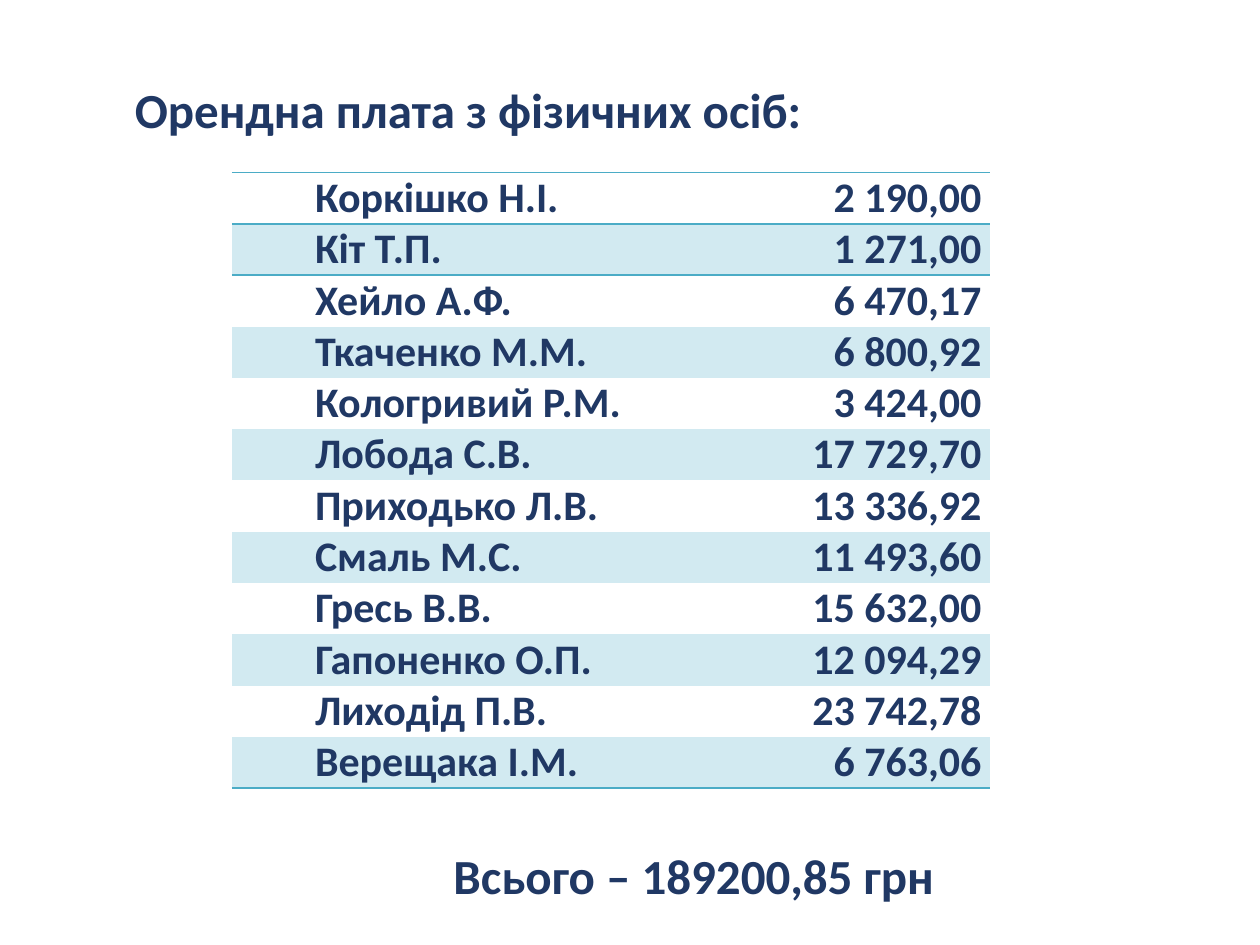
from typing import NamedTuple

from lxml.etree import SubElement
from pptx import Presentation
from pptx.dml.color import RGBColor
from pptx.enum.text import MSO_ANCHOR, MSO_AUTO_SIZE, PP_ALIGN
from pptx.oxml.ns import qn
from pptx.util import Inches, Pt

NAVY, TEAL, BAND = "203864", "4BACC6", "D2EAF1"
NO_STYLE = "{2D5ABB26-0587-4C30-8999-92F81FD0307C}"
ROW_HEIGHT = 0.4


class Payment(NamedTuple):
    tenant: str
    amount: str


PAYMENTS = [
    Payment("Коркішко Н.І.", "2 190,00"),
    Payment("Кіт Т.П.", "1 271,00"),
    Payment("Хейло А.Ф.", "6 470,17"),
    Payment("Ткаченко М.М.", "6 800,92"),
    Payment("Кологривий Р.М.", "3 424,00"),
    Payment("Лобода С.В.", "17 729,70"),
    Payment("Приходько Л.В.", "13 336,92"),
    Payment("Смаль М.С.", "11 493,60"),
    Payment("Гресь В.В.", "15 632,00"),
    Payment("Гапоненко О.П.", "12 094,29"),
    Payment("Лиходід П.В.", "23 742,78"),
    Payment("Верещака І.М.", "6 763,06"),
]


def rgb(color: str) -> RGBColor:
    return RGBColor.from_string(color)


def write(tf, text: str, *, size=28, color=NAVY, align=PP_ALIGN.LEFT, indent=0.0) -> None:
    p = tf.paragraphs[0]
    p.alignment = align
    if indent:
        p._p.get_or_add_pPr().set("marL", str(Inches(indent)))
    r = p.add_run()
    r.text = text
    r.font.name, r.font.size, r.font.bold = "Calibri", Pt(size), True
    r.font.color.rgb = rgb(color)


def place(sp, left: float, top: float, width: float, height: float) -> None:
    sp.left, sp.top = Inches(left), Inches(top)
    sp.width, sp.height = Inches(width), Inches(height)


def add_border(cell, tag: str, color: str) -> None:
    """Draw one side of a cell; call before setting its fill, top before bottom."""
    ln = SubElement(cell._tc.get_or_add_tcPr(), qn(tag), w=str(Pt(1)))
    fill = SubElement(ln, qn("a:solidFill"))
    SubElement(fill, qn("a:srgbClr"), val=color)


def format_cell(cell, row: int, last: int) -> None:
    cell.margin_left = cell.margin_right = Inches(0.07)
    cell.margin_top = cell.margin_bottom = 0
    if row in (0, 1):
        add_border(cell, "a:lnT", TEAL)
    if row in (0, last):
        add_border(cell, "a:lnB", TEAL)
    if row % 2:
        cell.fill.solid()
        cell.fill.fore_color.rgb = rgb(BAND)
    else:
        cell.fill.background()


def add_payments(s, payments: list[Payment]) -> None:
    widths = (3.34, 2.68)
    frame = s.shapes.add_table(
        len(payments), len(widths), Inches(1.84), Inches(1.37),
        Inches(sum(widths)), Inches(ROW_HEIGHT * len(payments)))
    table = frame.table
    table.first_row = table.horz_banding = False
    table._tbl.tblPr.find(qn("a:tableStyleId")).text = NO_STYLE
    for column, width in zip(table.columns, widths):
        column.width = Inches(width)
    for i, payment in enumerate(payments):
        table.rows[i].height = Inches(ROW_HEIGHT)
        for j, align in enumerate((PP_ALIGN.LEFT, PP_ALIGN.RIGHT)):
            cell = table.cell(i, j)
            format_cell(cell, i, len(payments) - 1)
            write(cell.text_frame, payment[j], size=24, align=align, indent=0.59)


def main() -> None:
    prs = Presentation()
    prs.slide_width, prs.slide_height = Inches(10), Inches(7.5)
    s = prs.slides.add_slide(prs.slide_layouts[5])

    title = s.shapes.title
    place(title, 0.97, 0.58, 5.83, 0.57)
    title.text_frame.auto_size = MSO_AUTO_SIZE.NONE
    title.text_frame.vertical_anchor = MSO_ANCHOR.TOP
    write(title.text_frame, "Орендна плата з фізичних осіб:")

    add_payments(s, PAYMENTS)

    total = s.shapes.add_textbox(Inches(3.5), Inches(6.66), Inches(4.15), Inches(0.57))
    total.text_frame.word_wrap = True
    write(total.text_frame, "Всього – 189200,85 грн")

    prs.save("out.pptx")


if __name__ == "__main__":
    main()
